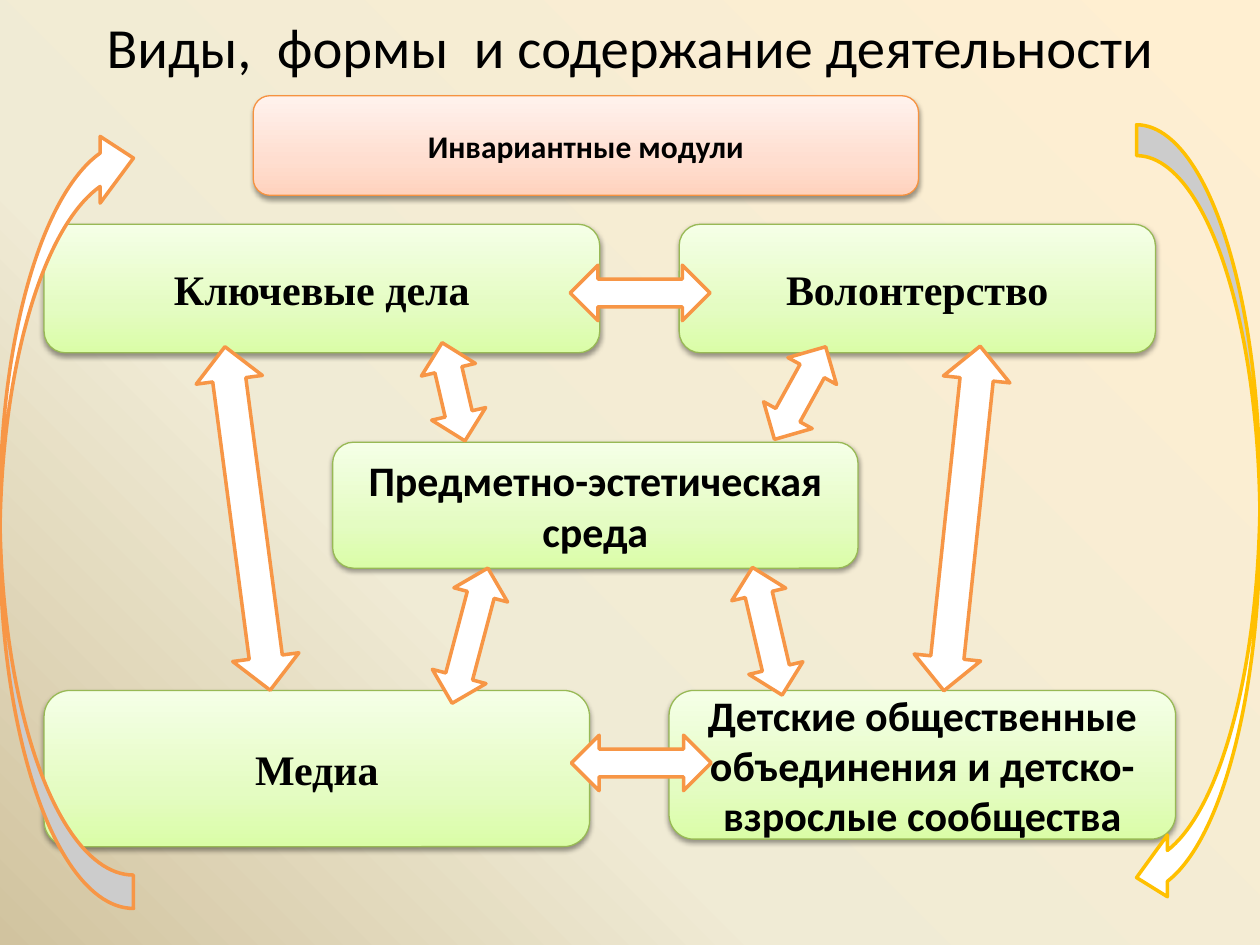
from dataclasses import dataclass

from lxml.etree import SubElement
from pptx import Presentation
from pptx.dml.color import RGBColor
from pptx.enum.shapes import MSO_SHAPE
from pptx.enum.text import MSO_ANCHOR, MSO_AUTO_SIZE, PP_ALIGN
from pptx.oxml.ns import qn
from pptx.util import Inches, Pt


@dataclass(frozen=True)
class Theme:
    background: tuple = ((0, "FFEFD1"), (65, "F0EBD5"), (100, "D1C39F"))
    green: tuple = ((0, "DAFDA7"), (35, "E4FCC2"), (100, "F5FFE7"))
    green_line: str = "98B955"
    peach: tuple = ((0, "FFD2BD"), (35, "FFDED0"), (100, "FFF2ED"))
    peach_line: str = "F69240"
    arrow_fill: str = "FFFFFF"
    orange: str = "F79646"
    gold: str = "FFC000"
    text: str = "000000"
    shadow: str = "000000"
    sans: str = "Calibri"
    serif: str = "Times New Roman"
    title_size: float = 32.4
    module_size: int = 24
    header_size: int = 18


theme = Theme()


def apply_gradient(fill, properties, stops, angle):
    fill.solid()
    solid = properties.find(qn("a:solidFill"))
    gradient = SubElement(properties, qn("a:gradFill"), rotWithShape="1")
    stop_list = SubElement(gradient, qn("a:gsLst"))
    for position, color in stops:
        stop = SubElement(stop_list, qn("a:gs"), pos=str(position * 1000))
        SubElement(stop, qn("a:srgbClr"), val=color)
    SubElement(gradient, qn("a:lin"), ang=str(angle * 60000), scaled="0")
    properties.replace(solid, gradient)


def format_text(frame, text, font_name, size, bold):
    frame.text = text
    frame.word_wrap = True
    frame.auto_size = MSO_AUTO_SIZE.NONE
    frame.vertical_anchor = MSO_ANCHOR.MIDDLE
    paragraph = frame.paragraphs[0]
    paragraph.alignment = PP_ALIGN.CENTER
    paragraph.font.name = font_name
    paragraph.font.size = Pt(size)
    paragraph.font.bold = bold
    paragraph.font.color.rgb = RGBColor.from_string(theme.text)


presentation = Presentation()
presentation.slide_width = Inches(10)
presentation.slide_height = Inches(7.5)
slide = presentation.slides.add_slide(presentation.slide_layouts[5])
background_fill = slide.background.fill
background_fill.solid()
apply_gradient(background_fill, slide.background._cSld.bg.bgPr, theme.background, 135)

title = slide.shapes.title
title.left, title.top = Inches(0.5), Inches(0.02)
title.width, title.height = Inches(9), Inches(0.69)
format_text(title.text_frame, "Виды,  формы  и содержание деятельности",
            theme.sans, theme.title_size, False)

green_style = (theme.green, theme.green_line, theme.module_size)
peach_style = (theme.peach, theme.peach_line, theme.header_size)
modules = [
    ("Волонтерство", 5.39, 1.78, 3.78, 1.02, theme.serif, green_style),
    ("Ключевые дела", 0.35, 1.78, 4.41, 1.02, theme.serif, green_style),
    ("Детские общественные объединения и детско-взрослые сообщества",
     5.31, 5.48, 4.02, 1.18, theme.sans, green_style),
    ("Медиа", 0.35, 5.48, 4.33, 1.24, theme.serif, green_style),
    ("Предметно-эстетическая среда", 2.64, 3.51, 4.17, 1, theme.sans, green_style),
    ("Инвариантные модули", 2.01, 0.76, 5.28, 0.79, theme.sans, peach_style),
]
for text, left, top, width, height, font_name, (stops, line_color, size) in modules:
    module = slide.shapes.add_shape(
        MSO_SHAPE.ROUNDED_RECTANGLE, Inches(left), Inches(top), Inches(width), Inches(height))
    properties = module._element.spPr
    apply_gradient(module.fill, properties, stops, 270)
    module.line.color.rgb = RGBColor.from_string(line_color)
    module.line.width = Pt(0.75)
    module.shadow.inherit = False
    shadow = SubElement(properties.find(qn("a:effectLst")), qn("a:outerShdw"),
                        blurRad=str(Pt(3.1)), dist=str(Pt(1.6)), dir="5400000", rotWithShape="0")
    shadow_color = SubElement(shadow, qn("a:srgbClr"), val=theme.shadow)
    SubElement(shadow_color, qn("a:alpha"), val="38000")
    format_text(module.text_frame, text, font_name, size, True)

double = MSO_SHAPE.UP_DOWN_ARROW
arrows = [
    (double, 1.7, 2.74, 0.53, 2.75, 352.5, theme.orange),
    (double, 7.37, 2.74, 0.53, 2.75, 6, theme.orange),
    (double, 4.87, 5.5, 0.44, 1.11, 270, theme.orange),
    (double, 4.86, 1.77, 0.44, 1.11, 270, theme.orange),
    (double, 5.87, 4.49, 0.44, 1.04, 346.9, theme.orange),
    (double, 3.51, 4.49, 0.44, 1.11, 14.8, theme.orange),
    (double, 6.13, 2.7, 0.44, 0.84, 28.9, theme.orange),
    (double, 3.38, 2.71, 0.44, 0.8, 346.9, theme.orange),
    (MSO_SHAPE.CURVED_DOWN_ARROW, -2.58, 3.57, 6.22, 1.06, 270, theme.orange),
    (MSO_SHAPE.CURVED_LEFT_ARROW, 9.02, 0.99, 0.98, 6.22, 0, theme.gold),
]
for kind, left, top, width, height, rotation, line_color in arrows:
    arrow = slide.shapes.add_shape(
        kind, Inches(left), Inches(top), Inches(width), Inches(height))
    arrow.rotation = rotation
    arrow.fill.solid()
    arrow.fill.fore_color.rgb = RGBColor.from_string(theme.arrow_fill)
    arrow.line.color.rgb = RGBColor.from_string(line_color)
    arrow.line.width = Pt(2)
    arrow.shadow.inherit = False

presentation.save("out.pptx")
